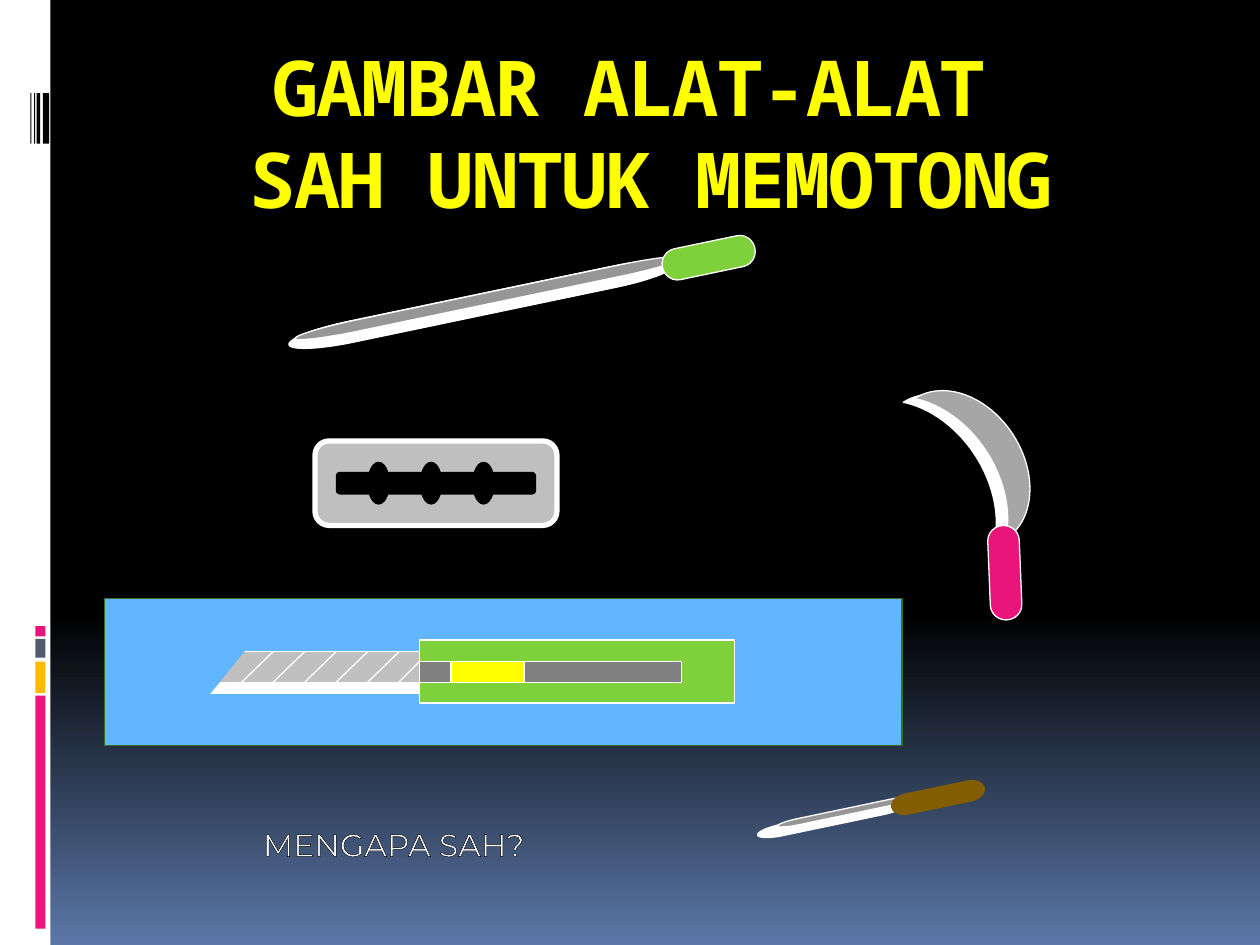
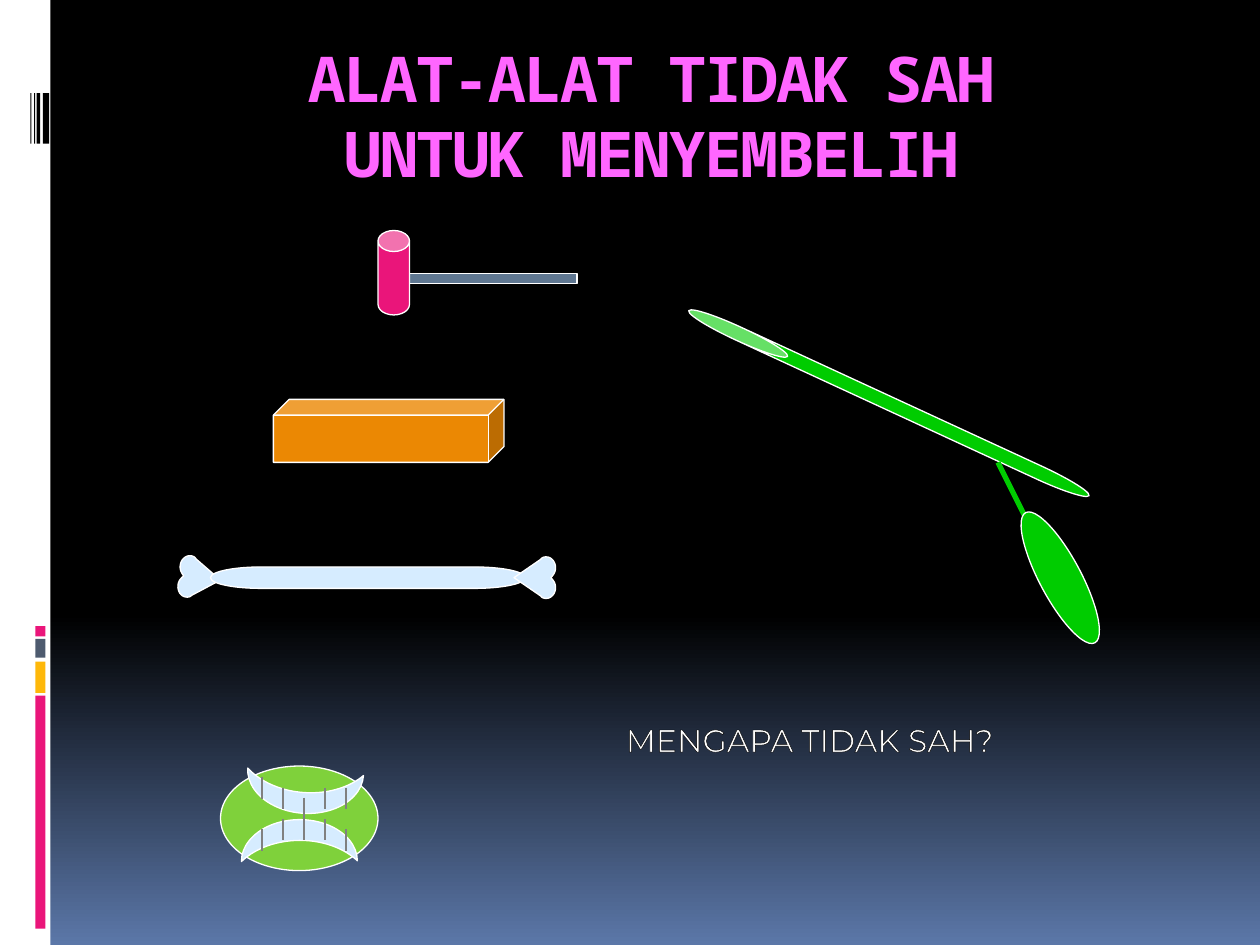
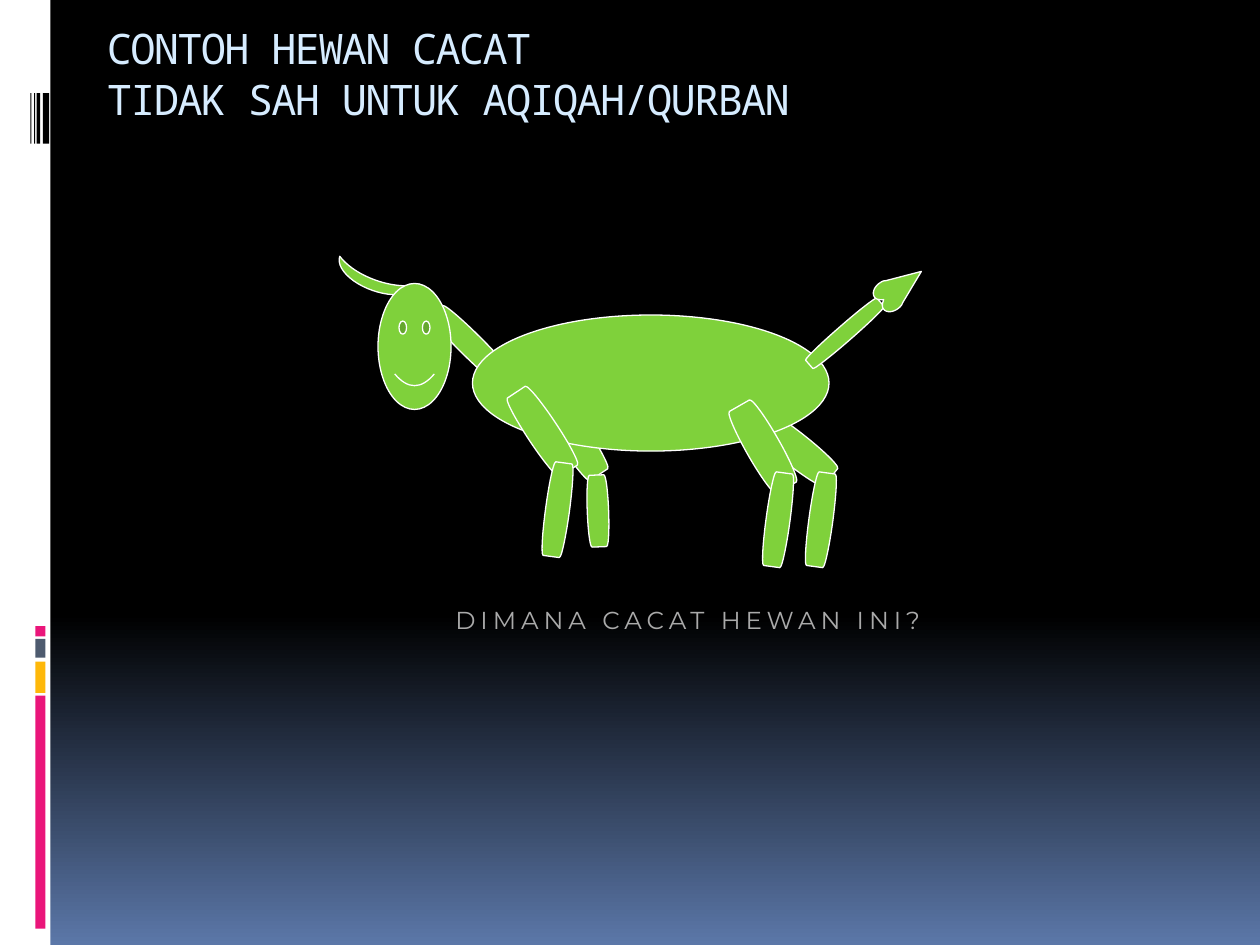
from copy import deepcopy
from math import cos, radians, sin

from lxml.etree import SubElement
from pptx import Presentation
from pptx.dml.color import RGBColor
from pptx.enum.shapes import MSO_CONNECTOR, MSO_SHAPE
from pptx.enum.text import MSO_ANCHOR, PP_ALIGN
from pptx.oxml import parse_xml
from pptx.oxml.ns import nsdecls, qn
from pptx.util import Inches, Pt

# Shared colours and fonts
WHITE, BLACK = "FFFFFF", "000000"
PINK, AMBER, SLATE = "EA157A", "FEB80A", "4E5B6F"
GREEN, LEAF, BONE, SKY = "7FD13B", "00CC00", "D6ECFF", "61B6FF"
SILVER, STEEL, GREY = "C0C0C0", "969696", "808080"
TITLE_FONT, BODY_FONT = "Noto Sans Mono", "Montserrat"
BACKDROP = [(0, BLACK), (0.65, BLACK), (1, "5B77A8")]

# Left band: left, top, width, height, colour
BAND = [
    (0, 0, 0.4, 7.5, WHITE),
    (0.28, 5.52, 0.08, 1.85, PINK),
    (0.28, 5.25, 0.08, 0.25, AMBER),
    (0.28, 5.07, 0.08, 0.15, SLATE),
    (0.28, 4.97, 0.08, 0.08, PINK),
    (0.34, 0.74, 0.05, 0.4, BLACK),
    (0.29, 0.74, 0.03, 0.4, BLACK),
    (0.27, 0.74, 0.01, 0.4, BLACK),
    (0.24, 0.74, 0.01, 0.4, BLACK),
]

# Right half of a heart of size 1 around its centre, as cubic curves
HEART_LOBE = [
    ((0, -0.39), (0.06, -0.44), (0.12, -0.5), (0.24, -0.5)),
    ((0.24, -0.5), (0.38, -0.5), (0.5, -0.4), (0.5, -0.28)),
    ((0.5, -0.28), (0.5, -0.22), (0.49, -0.18), (0.44, -0.14)),
]

RECT, OVAL = MSO_SHAPE.RECTANGLE, MSO_SHAPE.OVAL
MOON, CAN = MSO_SHAPE.MOON, MSO_SHAPE.CAN
PILL = MSO_SHAPE.FLOWCHART_TERMINATOR
PLATE = MSO_SHAPE.FLOWCHART_ALTERNATE_PROCESS


def rgb(colour):
    return RGBColor.from_string(colour)


# Drawing elements
def paint(shape, fill, line=WHITE, width=0.75):
    shape.shadow.inherit = False
    shape.fill.solid()
    shape.fill.fore_color.rgb = rgb(fill)
    if line:
        shape.line.color.rgb = rgb(line)
        shape.line.width = Pt(width)
    else:
        shape.line.fill.background()
    return shape


def add_part(slide, kind, box, fill, line=WHITE, width=0.75, turn=0, adjust=None):
    part = slide.shapes.add_shape(kind, *map(Inches, box))
    part.rotation = turn
    if adjust is not None:
        part.adjustments[0] = adjust
    return paint(part, fill, line, width)


def add_stroke(slide, start, end, colour=WHITE, width=0.75):
    stroke = slide.shapes.add_connector(
        MSO_CONNECTOR.STRAIGHT, *map(Inches, (*start, *end)))
    stroke.line.color.rgb = rgb(colour)
    stroke.line.width = Pt(width)
    SubElement(stroke._element.spPr, qn("a:effectLst"))


def curve_point(curve, t):
    weights = ((1 - t) ** 3, 3 * t * (1 - t) ** 2, 3 * t * t * (1 - t), t ** 3)
    return tuple(sum(w * p[axis] for w, p in zip(weights, curve)) for axis in (0, 1))


def add_heart(slide, box, turn, fill):
    left, top, width, height = box
    lobe = [curve_point(curve, step / 8) for curve in HEART_LOBE for step in range(9)]
    outline = lobe + [(0, 0.5)] + [(-x, y) for x, y in reversed(lobe)]
    c, s = cos(radians(turn)), sin(radians(turn))
    points = []
    for x, y in outline:
        x, y = x * width, y * height
        points.append((Inches(left + width / 2 + x * c - y * s),
                       Inches(top + height / 2 + x * s + y * c)))
    builder = slide.shapes.build_freeform(*points[0])
    builder.add_line_segments(points[1:], close=True)
    paint(builder.convert_to_shape(), fill)


def add_text(slide, box, lines, font, size, align, spacing=0):
    frame = slide.shapes.add_textbox(*map(Inches, box)).text_frame
    frame.vertical_anchor = MSO_ANCHOR.TOP
    paragraph = frame.paragraphs[0]
    paragraph.alignment = align
    runs = []
    for number, line in enumerate(lines):
        if number:
            paragraph.add_line_break()
        run = paragraph.add_run()
        run.text = line
        run.font.name = font
        run.font.size = Pt(size)
        if spacing:
            run.font._element.set("spc", str(round(spacing * 100)))
        runs.append(run)
    return frame, runs


def add_title(slide, box, lines, size, colour, bold=True, align=PP_ALIGN.CENTER):
    frame, runs = add_text(slide, box, lines, TITLE_FONT, size, align, -1)
    frame.word_wrap = True
    frame.margin_top = frame.margin_bottom = Inches(0.01)
    for run in runs:
        run.font.bold = bold
        run.font.color.rgb = rgb(colour)


def add_question(slide, box, question, size=18, spacing=0):
    frame, runs = add_text(slide, box, [question], BODY_FONT, size,
                           PP_ALIGN.CENTER, spacing)
    frame.word_wrap = False
    return runs[0].font


def outline_text(font):
    font.color.rgb = rgb(WHITE)
    font._element.insert(0, parse_xml(
        f'<a:ln {nsdecls("a")} w="9525"><a:solidFill>'
        f'<a:srgbClr val="{BLACK}"/></a:solidFill></a:ln>'))


def set_stops(fill, stops):
    for stop, (position, colour) in zip(fill.gradient_stops, stops):
        stop.position = position
        stop.color.rgb = rgb(colour)
    fill.gradient_angle = 270


def add_slide(deck):
    slide = deck.slides.add_slide(deck.slide_layouts[6])
    backdrop = slide.background.fill
    backdrop.gradient()
    stop_list = slide.element.find(".//" + qn("a:gsLst"))
    stop_list.append(deepcopy(stop_list[-1]))
    set_stops(backdrop, BACKDROP)
    for *box, colour in BAND:
        add_part(slide, RECT, box, colour, line=None)
    return slide


# Tools for cutting
def add_knife(slide, edge, spine, handle, colour, border):
    for box, fill, line in ((edge, WHITE, WHITE), (spine, STEEL, WHITE),
                            (handle, colour, border)):
        add_part(slide, PILL, box, fill, line, turn=348.2)


def add_sickle(slide):
    for left, top, fill in ((7.49, 2.95, WHITE), (7.58, 2.92, "A6A6A6")):
        add_part(slide, MOON, (left, top, 0.5, 1.33), fill, turn=147.1, adjust=0.5)
    add_part(slide, PILL, (7.6, 4.42, 0.75, 0.25), PINK, turn=267.7)


def add_razor(slide):
    add_part(slide, PLATE, (2.5, 3.5, 1.92, 0.67), "BFBFBF", width=3)
    add_part(slide, PLATE, (2.67, 3.75, 1.58, 0.17), BLACK, BLACK)
    for hole in range(3):
        add_part(slide, OVAL, (2.92 + hole * 5 / 12, 3.67, 0.17, 0.33), BLACK, BLACK)


def add_cutter(slide):
    add_part(slide, RECT, (0.83, 4.75, 6.33, 1.17), SKY, "3F6D19")
    add_part(slide, RECT, (1.58, 5.17, 2.5, 0.33), WHITE)
    add_part(slide, RECT, (1.58, 5.17, 2.5, 0.25), SILVER)
    add_part(slide, RECT, (3.33, 5.08, 2.5, 0.5), GREEN)
    add_part(slide, RECT, (3.33, 5.25, 2.08, 0.17), GREY)
    for notch in range(6):
        x = 1.92 + notch * 0.25
        add_stroke(slide, (x, 5.17), (x - 0.34, 5.5))
    add_stroke(slide, (3.33, 5.25), (3.08, 5.5))
    add_part(slide, RECT, (3.58, 5.25, 0.58, 0.17), "FFFF00")
    add_part(slide, MSO_SHAPE.ISOSCELES_TRIANGLE, (1.38, 4.99, 0.56, 0.63),
             SKY, SKY, turn=195.1)


# Tools that do not count
def add_hammer(slide):
    add_part(slide, RECT, (3.25, 2.17, 1.33, 0.08), "5F7791")
    add_part(slide, CAN, (3, 1.83, 0.25, 0.67), PINK, adjust=0.667)


def add_bone(slide):
    add_heart(slide, (1.42, 4.42, 0.33, 0.33), 276.5, BONE)
    add_part(slide, PILL, (1.67, 4.5, 2.5, 0.17), BONE)
    add_heart(slide, (4.08, 4.42, 0.33, 0.33), 90, BONE)


def add_teeth(slide):
    add_part(slide, OVAL, (1.75, 6.08, 1.25, 0.83), GREEN)
    for left, top, turn in ((2.25, 5.83, 273.7), (2.21, 6.21, 89.6)):
        add_part(slide, MOON, (left, top, 0.33, 0.92), BONE, turn=turn, adjust=0.5)
    upper = (6.17, 6.25, 6.33, 6.25, 6.25)
    lower = (6.58, 6.5, 6.5, 6.5, 6.58)
    for gap, tops in enumerate(zip(upper, lower)):
        x = 2.08 + gap / 6
        for top in tops:
            add_stroke(slide, (x, top), (x, top + 0.17), GREY)


def add_bamboo(slide):
    add_part(slide, CAN, (7, 1.45, 0.11, 3.5), LEAF, turn=294.8, adjust=7.875)
    add_stroke(slide, (7.92, 3.67), (8.25, 4.33), LEAF, 3)
    add_part(slide, OVAL, (8.25, 4, 0.33, 1.17), LEAF, turn=332)


# Animal
def add_limbs(slide, limbs):
    for *box, turn in limbs:
        add_part(slide, PILL, box, GREEN, turn=turn)


def add_animal(slide):
    add_part(slide, MOON, (2.9, 1.89, 0.17, 0.67), GREEN, turn=289.3, adjust=0.5)
    # Far thighs and neck, behind the body
    add_limbs(slide, [
        (4.42, 3.08, 0.25, 0.75, 326.4),
        (6.17, 3.18, 0.26, 0.75, 308.3),
        (3.64, 2.36, 0.19, 0.75, 314.7),
    ])
    add_part(slide, MSO_SHAPE.SMILEY_FACE, (3, 2.25, 0.58, 1), GREEN, adjust=0.047)
    add_part(slide, OVAL, (3.75, 2.5, 2.83, 1.08), GREEN)
    # Near thighs, shins and tail
    add_limbs(slide, [
        (5.92, 3.17, 0.27, 0.75, 330.2),
        (4.18, 3.05, 0.25, 0.75, 326.4),
        (6.08, 3.75, 0.19, 0.75, 187.7),
        (4.33, 3.67, 0.19, 0.75, 187.7),
        (4.66, 3.77, 0.17, 0.57, 177.8),
        (6.64, 2.27, 0.13, 0.75, 228.9),
        (6.42, 3.75, 0.19, 0.75, 187.7),
    ])
    add_heart(slide, (7.02, 2.07, 0.25, 0.42), 233.1, GREEN)


# Slides
def build_valid_tools(deck):
    slide = add_slide(deck)
    add_title(slide, (0.67, 0.3, 9, 1.45),
              ["GAMBAR ALAT-ALAT ", "SAH UNTUK MEMOTONG"], 44, "FFFF00")
    add_cutter(slide)
    add_sickle(slide)
    add_knife(slide, (2.26, 2.33, 3.14, 0.17), (2.31, 2.32, 3.14, 0.09),
              (5.25, 1.92, 0.75, 0.25), GREEN, WHITE)
    add_razor(slide)
    add_knife(slide, (6, 6.46, 1.2, 0.09), (6.16, 6.42, 1.08, 0.05),
              (7.07, 6.25, 0.75, 0.16), "835E01", "835E01")
    outline_text(add_question(slide, (1, 6.5, 4.25, 0.5), "MENGAPA SAH?"))


def build_invalid_tools(deck):
    slide = add_slide(deck)
    add_title(slide, (0.67, 0.3, 9, 0.95),
              ["ALAT-ALAT TIDAK SAH", "UNTUK MENYEMBELIH"], 36, "FF66FF")
    add_hammer(slide)
    add_part(slide, MSO_SHAPE.CUBE, (2.17, 3.17, 1.83, 0.5), "EB8803", adjust=0.25)
    add_bone(slide)
    add_teeth(slide)
    add_bamboo(slide)
    outline_text(add_question(slide, (4.83, 5.67, 3.19, 0.77), "MENGAPA TIDAK SAH?"))


def build_defective_animal(deck):
    slide = add_slide(deck)
    add_title(slide, (0.75, 0.17, 7.51, 1.27),
              ["CONTOH HEWAN CACAT", "TIDAK SAH UNTUK AQIQAH/QURBAN"],
              24, BONE, bold=False, align=PP_ALIGN.LEFT)
    add_animal(slide)
    font = add_question(slide, (3.5, 4.75, 3.92, 0.75),
                        "DIMANA CACAT HEWAN INI?", 14, 2.8)
    font.fill.gradient()
    set_stops(font.fill, [(0, "AAAAAA"), (1, WHITE)])


def main():
    deck = Presentation()
    deck.slide_width, deck.slide_height = Inches(10), Inches(7.5)
    build_valid_tools(deck)
    build_invalid_tools(deck)
    build_defective_animal(deck)
    deck.save("out.pptx")


if __name__ == "__main__":
    main()
